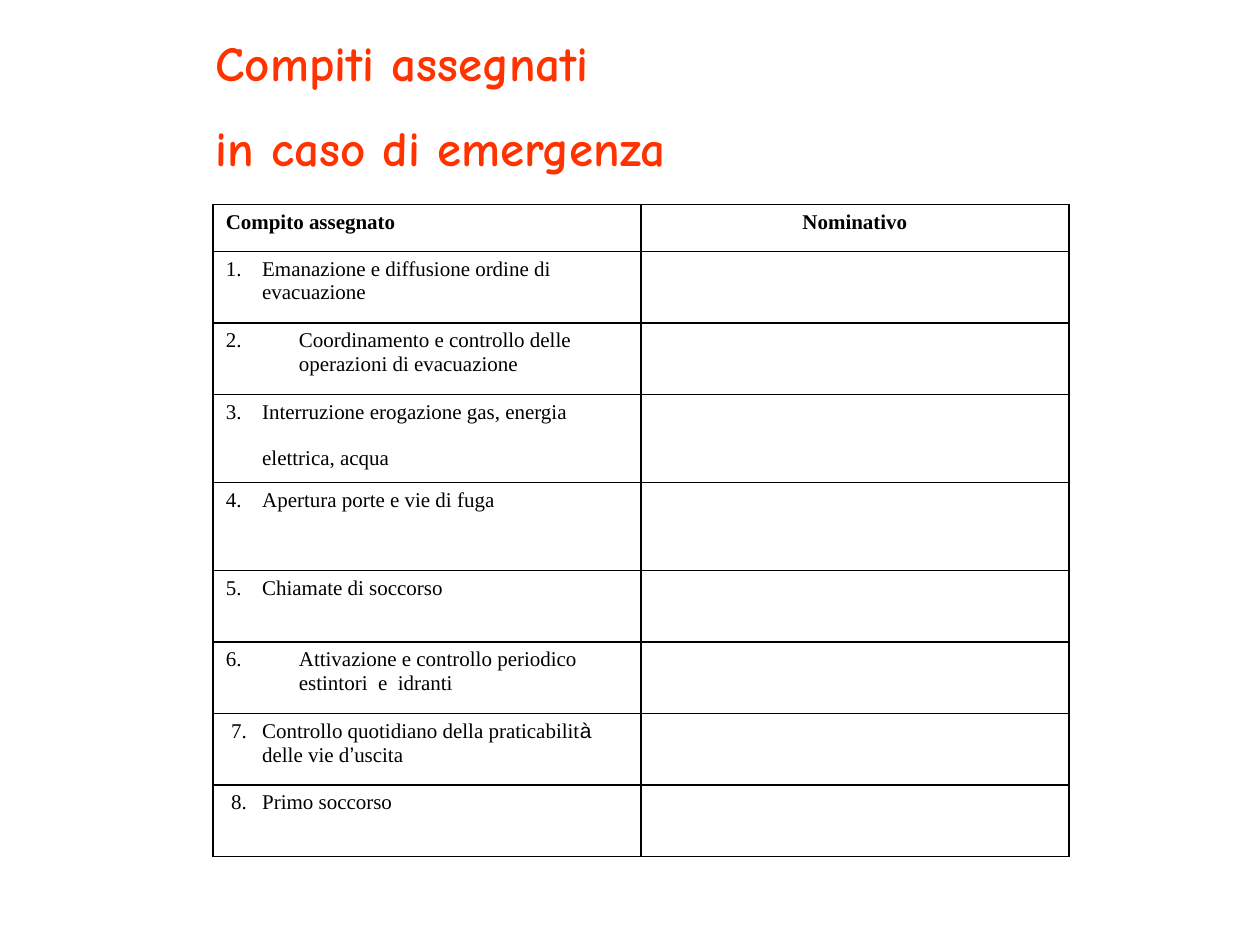
from lxml.etree import SubElement
from pptx import Presentation
from pptx.dml.color import RGBColor
from pptx.enum.text import MSO_ANCHOR, MSO_AUTO_SIZE, PP_ALIGN
from pptx.oxml.ns import qn
from pptx.util import Pt

COLOURS = {"title": "FF3300", "text": "000000", "border": "000000", "background": "FFFFFF"}
SERIF = "Times New Roman"
SANS = "Arial"
NARROW, WIDE, SHIFTED = (20.8, -20.8), (41.8, -41.8), (20.8, -17.8)
COLUMN_WIDTH = 244.5
HEADER_HEIGHT = 26.8
SHORT_ROW, TALL_ROW = 40.9, 50.3
TASKS = [
    (SHORT_ROW, NARROW, [["Emanazione e diffusione ordine di evacuazione"]]),
    (SHORT_ROW, WIDE, [["Coordinamento e controllo delle operazioni di evacuazione"]]),
    (TALL_ROW, NARROW, [["Interruzione erogazione gas, energia"], ["elettrica, acqua"]]),
    (TALL_ROW, NARROW, [["Apertura porte e vie di fuga"]]),
    (SHORT_ROW, NARROW, [["Chiamate di soccorso"]]),
    (SHORT_ROW, WIDE, [["Attivazione e controllo periodico estintori  e  idranti"]]),
    (SHORT_ROW, SHIFTED, [["Controllo quotidiano della praticabilit", "à", " delle vie d", "’", "uscita"]]),
    (SHORT_ROW, SHIFTED, [["Primo soccorso"]]),
]


def add_run(paragraph, text, font_name, size, colour, bold=False):
    """Append one formatted run to a paragraph."""
    run = paragraph.add_run()
    run.text = text
    run.font.name = font_name
    run.font.size = Pt(size)
    run.font.bold = bold
    run.font.color.rgb = RGBColor.from_string(COLOURS[colour])


def add_title(slide, lines):
    """Place the title and write one paragraph for each line."""
    title = slide.shapes.title
    title.left, title.top, title.width, title.height = Pt(116), Pt(15), Pt(300), Pt(91.5)
    frame = title.text_frame
    frame.word_wrap = True
    frame.auto_size = MSO_AUTO_SIZE.NONE
    frame.vertical_anchor = MSO_ANCHOR.TOP
    for index, line in enumerate(lines):
        paragraph = frame.add_paragraph() if index else frame.paragraphs[0]
        paragraph.alignment = PP_ALIGN.LEFT
        paragraph.line_spacing = 1.0
        paragraph.space_before = Pt(15 if index else 0)
        add_run(paragraph, line, "Comic Neue", 28, "title", bold=True)


def format_cell(cell):
    """Give a cell thin borders on all sides and a plain fill."""
    properties = cell._tc.get_or_add_tcPr()
    for side in ("lnL", "lnR", "lnT", "lnB"):
        line = SubElement(properties, qn(f"a:{side}"), w=str(Pt(1)))
        fill = SubElement(line, qn("a:solidFill"))
        SubElement(fill, qn("a:srgbClr"), val=COLOURS["border"])
    cell.fill.solid()
    cell.fill.fore_color.rgb = RGBColor.from_string(COLOURS["background"])


def indent_paragraph(paragraph, margin, first_line):
    """Set the left margin and first-line indent of a paragraph."""
    properties = paragraph._p.get_or_add_pPr()
    properties.set("marL", str(Pt(margin)))
    properties.set("indent", str(Pt(first_line)))
    return properties


def write_task(cell, number, indent, paragraphs):
    """Write a numbered task with a hanging indent."""
    margin, hanging = indent
    for index, texts in enumerate(paragraphs):
        paragraph = cell.text_frame.add_paragraph() if index else cell.text_frame.paragraphs[0]
        properties = indent_paragraph(paragraph, margin, 0 if index else hanging)
        if index:
            paragraph.space_before = Pt(13)
        else:
            SubElement(properties, qn("a:buFont"), typeface=SERIF)
            SubElement(properties, qn("a:buAutoNum"), type="arabicPeriod", startAt=str(number))
        for text in texts:
            add_run(paragraph, text, SANS if text in "à’" else SERIF, 12, "text")


def add_task_table(slide):
    """Add the table of emergency tasks and blank names."""
    heights = [HEADER_HEIGHT] + [height for height, _, _ in TASKS]
    table = slide.shapes.add_table(
        len(heights), 2, Pt(121.8), Pt(116.8), Pt(2 * COLUMN_WIDTH), Pt(sum(heights))
    ).table
    table.first_row = False
    table.horz_banding = False
    for column in table.columns:
        column.width = Pt(COLUMN_WIDTH)
    for row, height in zip(table.rows, heights):
        row.height = Pt(height)
    for cell in table.iter_cells():
        format_cell(cell)
    headings = [("Compito assegnato", PP_ALIGN.LEFT), ("Nominativo", PP_ALIGN.CENTER)]
    for index, (heading, alignment) in enumerate(headings):
        paragraph = table.cell(0, index).text_frame.paragraphs[0]
        paragraph.alignment = alignment
        add_run(paragraph, heading, SERIF, 12, "text", bold=True)
    for number, (_, indent, paragraphs) in enumerate(TASKS, start=1):
        write_task(table.cell(number, 0), number, indent, paragraphs)


def main():
    """Build and save the presentation."""
    presentation = Presentation()
    presentation.slide_width, presentation.slide_height = Pt(720), Pt(540)
    slide = presentation.slides.add_slide(presentation.slide_layouts[5])
    add_title(slide, ["Compiti assegnati", "in caso di emergenza"])
    add_task_table(slide)
    presentation.save("out.pptx")


if __name__ == "__main__":
    main()
